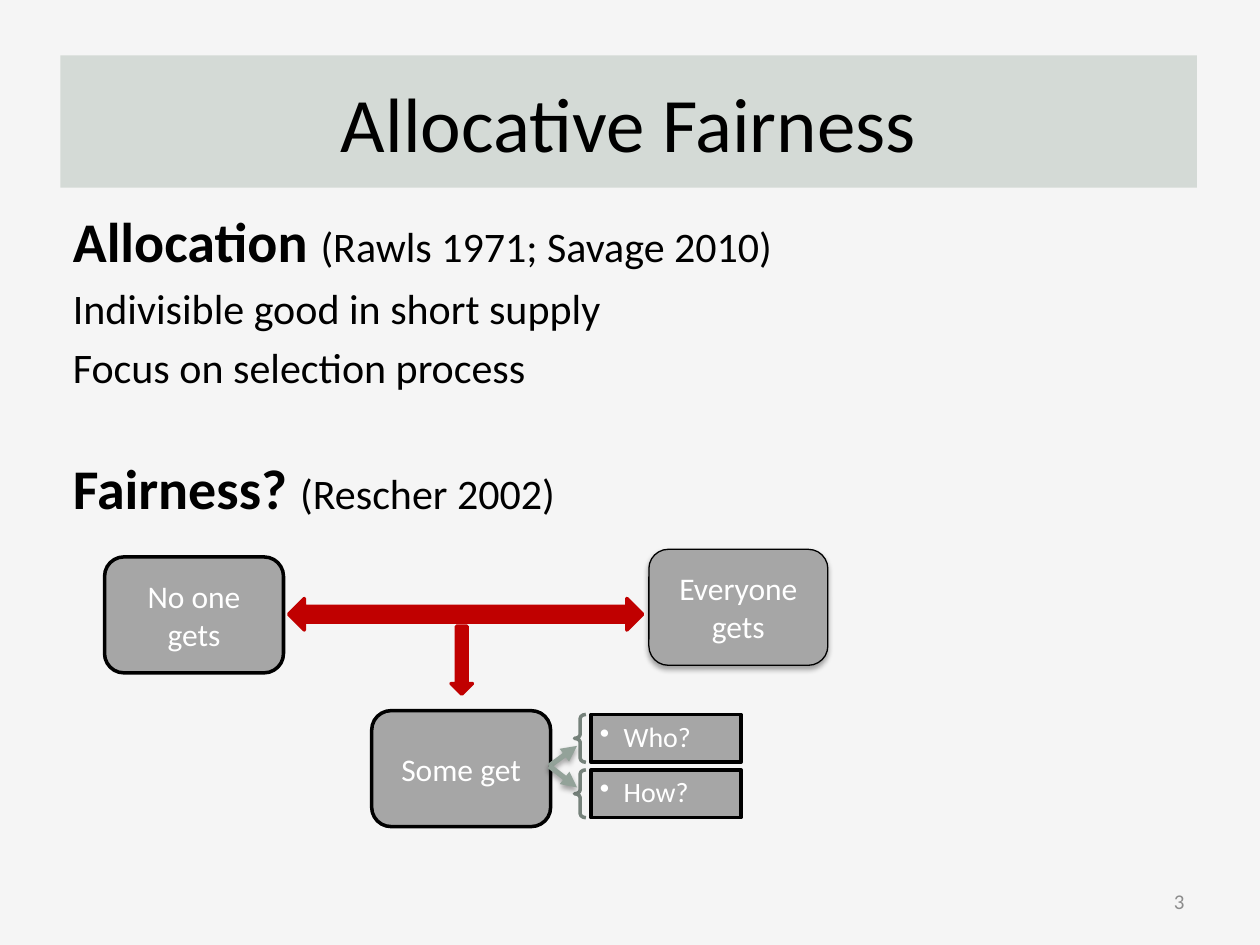
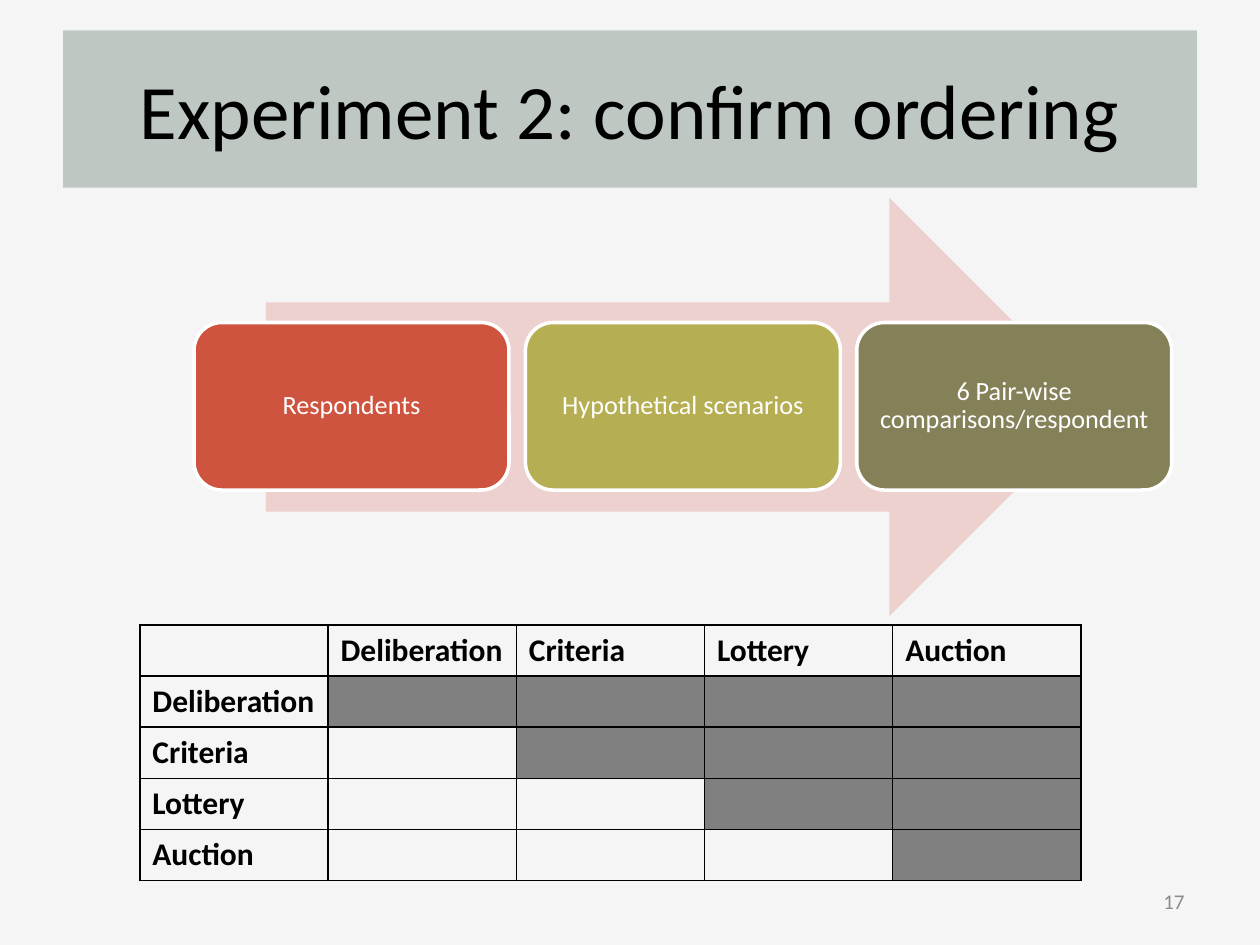
from dataclasses import dataclass
from typing import NamedTuple

from lxml.etree import SubElement
from pptx import Presentation
from pptx.dml.color import RGBColor
from pptx.enum.shapes import MSO_CONNECTOR, MSO_SHAPE as Preset
from pptx.enum.text import MSO_ANCHOR as Anchor, MSO_AUTO_SIZE, PP_ALIGN as Align
from pptx.oxml.ns import qn
from pptx.util import Inches, Pt


@dataclass(frozen=True)
class Theme:
    font: str = "Calibri"
    background: str = "F5F5F5"
    black: str = "000000"
    white: str = "FFFFFF"
    title_light: str = "D4DAD6"
    title_dark: str = "BEC7C2"
    page_number: str = "8C8C8C"
    box: str = "A6A6A6"
    red: str = "C00000"
    brace: str = "76827B"
    branch: str = "93A299"
    pale_arrow: str = "EDD1CF"
    used_cell: str = "808080"
    title_size: float = 44
    heading_size: float = 32
    body_size: float = 24
    box_size: float = 18
    question_size: float = 16
    step_size: float = 15
    number_size: float = 12


THEME = Theme()


class Area(NamedTuple):
    left: float
    top: float
    width: float
    height: float

    def lengths(self) -> list:
        return [Inches(value) for value in self]


class Span(NamedTuple):
    text: str
    size: float
    bold: bool = False


class Outcome(NamedTuple):
    text: str
    left: float
    top: float
    line_width: float = 2
    shadow: bool = False


class Step(NamedTuple):
    text: str
    fill: str


OUTCOME_SIZE = (1.42, 0.92)
OUTCOMES = [
    Outcome("No one gets", 0.83, 4.42),
    Outcome("Everyone\ngets", 5.15, 4.36, line_width=0.75, shadow=True),
    Outcome("Some get", 2.95, 5.64),
]
STEPS = [
    Step("Respondents", "CF543F"),
    Step("Hypothetical scenarios", "B5AE53"),
    Step("6 Pair-wise comparisons/respondent", "848058"),
]
METHODS = ["Deliberation", "Criteria", "Lottery", "Auction"]


def color(code: str) -> RGBColor:
    return RGBColor.from_string(code)


def add_span(para, span: Span, code: str) -> None:
    run = para.add_run()
    run.text = span.text
    font = run.font
    font.name, font.size, font.bold = THEME.font, Pt(span.size), span.bold
    font.color.rgb = color(code)


def write_text(frame, text: str, *, size: float, code: str = THEME.black,
               bold: bool = False, align=Align.LEFT, anchor=Anchor.MIDDLE,
               inset: float | None = None, line_spacing: float | None = None) -> None:
    """Fill a text frame, one paragraph for each line of the text."""
    frame.word_wrap = True
    frame.vertical_anchor = anchor
    if inset is not None:
        frame.margin_left = frame.margin_right = Inches(inset)
        frame.margin_top = frame.margin_bottom = Inches(inset)
    for index, line in enumerate(text.split("\n")):
        para = frame.add_paragraph() if index else frame.paragraphs[0]
        para.alignment = align
        para.line_spacing = line_spacing
        add_span(para, Span(line, size, bold), code)


def add_shadow(effects) -> None:
    shadow = SubElement(effects, qn("a:outerShdw"), blurRad=str(Pt(3.1)),
                        dist=str(Pt(1.8)), dir="5400000", rotWithShape="0")
    black = SubElement(shadow, qn("a:srgbClr"), val=THEME.black)
    SubElement(black, qn("a:alpha"), val="35000")


def add_preset(page, preset, area: Area, *, fill: str | None = None,
               line: str | None = None, line_width: float = 2, shadow: bool = False):
    shape = page.shapes.add_shape(preset, *area.lengths())
    if fill:
        shape.fill.solid()
        shape.fill.fore_color.rgb = color(fill)
    else:
        shape.fill.background()
    if line:
        shape.line.color.rgb = color(line)
        shape.line.width = Pt(line_width)
    else:
        shape.line.fill.background()
    shape.shadow.inherit = False
    if shadow:
        add_shadow(shape._element.spPr.find(qn("a:effectLst")))
    return shape


def add_page(deck, title: str, area: Area, fill: str, number: int):
    """Add a slide with its title band and page number."""
    page = deck.slides.add_slide(deck.slide_layouts.get_by_name("Title Only"))
    band = page.shapes.title
    band.left, band.top, band.width, band.height = area.lengths()
    band.fill.solid()
    band.fill.fore_color.rgb = color(fill)
    band.text_frame.auto_size = MSO_AUTO_SIZE.NONE
    write_text(band.text_frame, title, size=THEME.title_size, align=Align.CENTER)
    box = page.shapes.add_textbox(*Area(7.17, 6.95, 2.33, 0.4).lengths())
    write_text(box.text_frame, str(number), size=THEME.number_size,
               code=THEME.page_number, align=Align.RIGHT)
    return page


def add_definitions(page) -> None:
    heading, body = THEME.heading_size, THEME.body_size
    lines = [
        (6, [Span("Allocation ", heading, True), Span("(Rawls 1971; Savage 2010)", body)]),
        (5, [Span("Indivisible good in short supply", body)]),
        (5, [Span("Focus on selection process", body)]),
        (35, [Span("Fairness? ", heading, True), Span("(Rescher 2002)", body)]),
    ]
    frame = page.shapes.add_textbox(*Area(0.48, 1.59, 9.19, 2.7).lengths()).text_frame
    frame.word_wrap = True
    for index, (space, spans) in enumerate(lines):
        para = frame.add_paragraph() if index else frame.paragraphs[0]
        para.space_before = Pt(space)
        for span in spans:
            add_span(para, span, THEME.black)


def add_question(page, text: str, top: float) -> None:
    """Add a brace and the bulleted box it points from."""
    brace = add_preset(page, Preset.LEFT_BRACE, Area(4.56, top, 0.09, 0.38),
                       line=THEME.brace)
    brace.adjustments[0] = 0.35
    box = add_preset(page, Preset.RECTANGLE, Area(4.69, top, 1.19, 0.38),
                     fill=THEME.box, line=THEME.black)
    write_text(box.text_frame, text, size=THEME.question_size, code=THEME.white,
               inset=0.07, line_spacing=0.9)
    properties = box.text_frame.paragraphs[0]._p.get_or_add_pPr()
    properties.set("marL", str(Inches(0.19)))
    properties.set("indent", str(-Inches(0.19)))
    SubElement(properties, qn("a:buChar"), char="•")


def add_branch(page, end_y: float) -> None:
    branch = page.shapes.add_connector(
        MSO_CONNECTOR.STRAIGHT, Inches(4.36), Inches(6.08), Inches(4.58), Inches(end_y))
    branch.line.color.rgb = color(THEME.branch)
    branch.line.width = Pt(3)
    SubElement(branch.line._get_or_add_ln(), qn("a:tailEnd"), type="triangle")
    add_shadow(SubElement(branch._element.spPr, qn("a:effectLst")))


def build_allocation(deck) -> None:
    page = add_page(deck, "Allocative Fairness", Area(0.48, 0.44, 9.02, 1.05),
                    THEME.title_light, 3)
    add_definitions(page)
    for outcome in OUTCOMES:
        box = add_preset(page, Preset.ROUNDED_RECTANGLE,
                         Area(outcome.left, outcome.top, *OUTCOME_SIZE),
                         fill=THEME.box, line=THEME.black,
                         line_width=outcome.line_width, shadow=outcome.shadow)
        write_text(box.text_frame, outcome.text, size=THEME.box_size,
                   code=THEME.white, align=Align.CENTER)
    for preset, area in [(Preset.LEFT_RIGHT_ARROW, Area(2.29, 4.75, 2.81, 0.25)),
                         (Preset.DOWN_ARROW, Area(3.58, 4.97, 0.17, 0.54))]:
        add_preset(page, preset, area, fill=THEME.red, line=THEME.red)
    for text, top in [("Who?", 5.67), ("How?", 6.11)]:
        add_question(page, text, top)
    for end_y in (5.92, 6.25):
        add_branch(page, end_y)


def add_borders(cell) -> None:
    properties = cell._tc.get_or_add_tcPr()
    for side in ("lnL", "lnR", "lnT", "lnB"):
        border = SubElement(properties, qn(f"a:{side}"), w=str(Pt(1)))
        fill = SubElement(border, qn("a:solidFill"))
        SubElement(fill, qn("a:srgbClr"), val=THEME.black)


def add_pair_table(page) -> None:
    """Add the grid of pairs, shaded on and above its diagonal."""
    count = len(METHODS) + 1
    table = page.shapes.add_table(
        count, count, *Area(1.11, 4.96, 7.47, 2.03).lengths()).table
    table.first_row = table.horz_banding = False
    labels = ["", *METHODS]
    for row in range(count):
        for column in range(count):
            cell = table.cell(row, column)
            add_borders(cell)
            if 0 < row <= column:
                cell.fill.solid()
                cell.fill.fore_color.rgb = color(THEME.used_cell)
            else:
                cell.fill.background()
            if (row == 0) != (column == 0):
                write_text(cell.text_frame, labels[row + column], size=THEME.box_size,
                           bold=True, anchor=Anchor.TOP)


def build_experiment(deck) -> None:
    page = add_page(deck, "Experiment 2: confirm ordering", Area(0.5, 0.24, 9, 1.25),
                    THEME.title_dark, 17)
    add_preset(page, Preset.RIGHT_ARROW, Area(2.11, 1.57, 6.61, 3.32),
               fill=THEME.pale_arrow)
    for index, step in enumerate(STEPS):
        box = add_preset(page, Preset.ROUNDED_RECTANGLE,
                         Area(1.54 + 2.63 * index, 2.56, 2.5, 1.33),
                         fill=step.fill, line=THEME.white)
        write_text(box.text_frame, step.text, size=THEME.step_size, code=THEME.white,
                   align=Align.CENTER, inset=0.06, line_spacing=0.9)
    add_pair_table(page)


def main() -> None:
    deck = Presentation()
    deck.slide_width, deck.slide_height = Inches(10), Inches(7.5)
    backdrop = deck.slide_master.background.fill
    backdrop.solid()
    backdrop.fore_color.rgb = color(THEME.background)
    build_allocation(deck)
    build_experiment(deck)
    deck.save("out.pptx")


if __name__ == "__main__":
    main()
